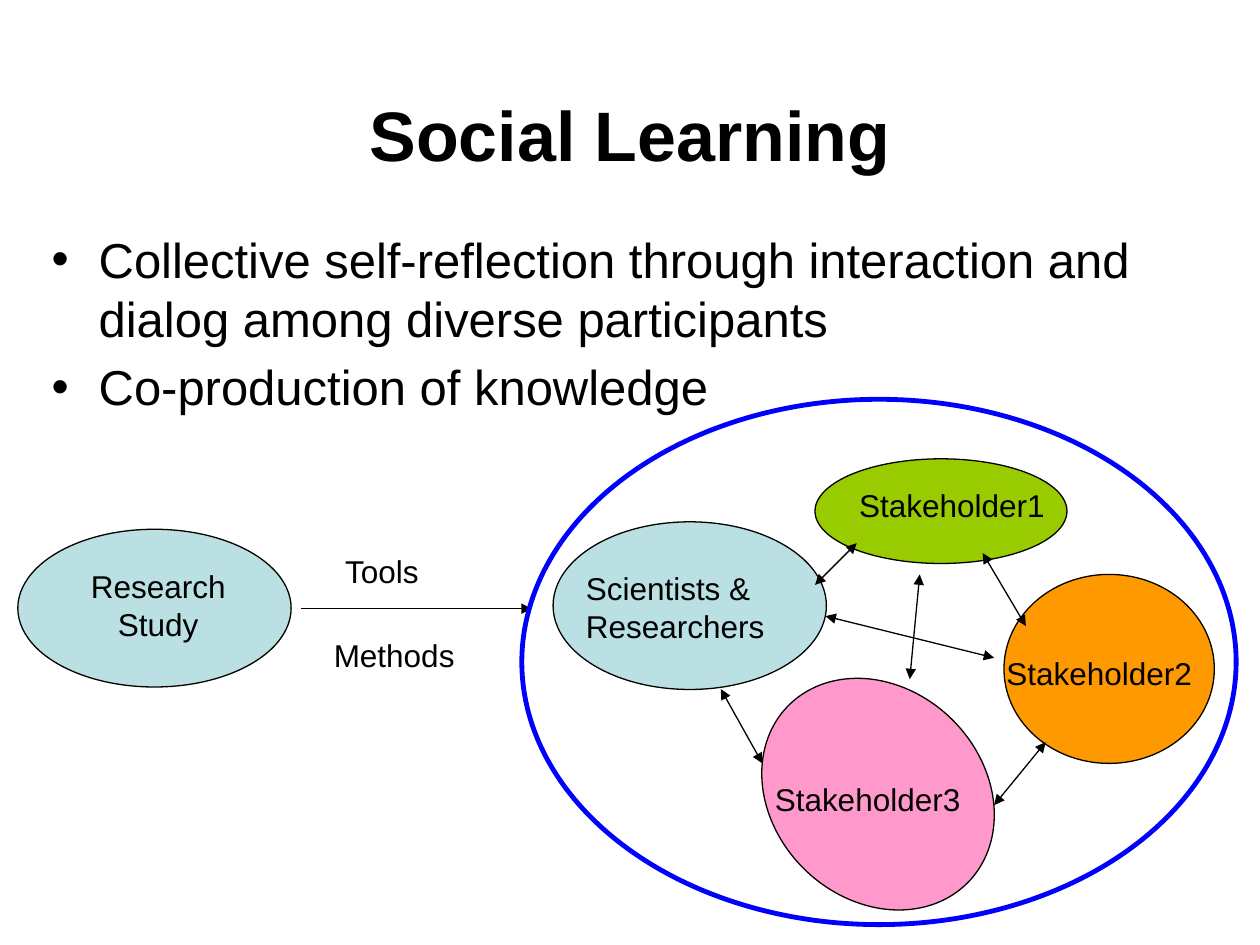
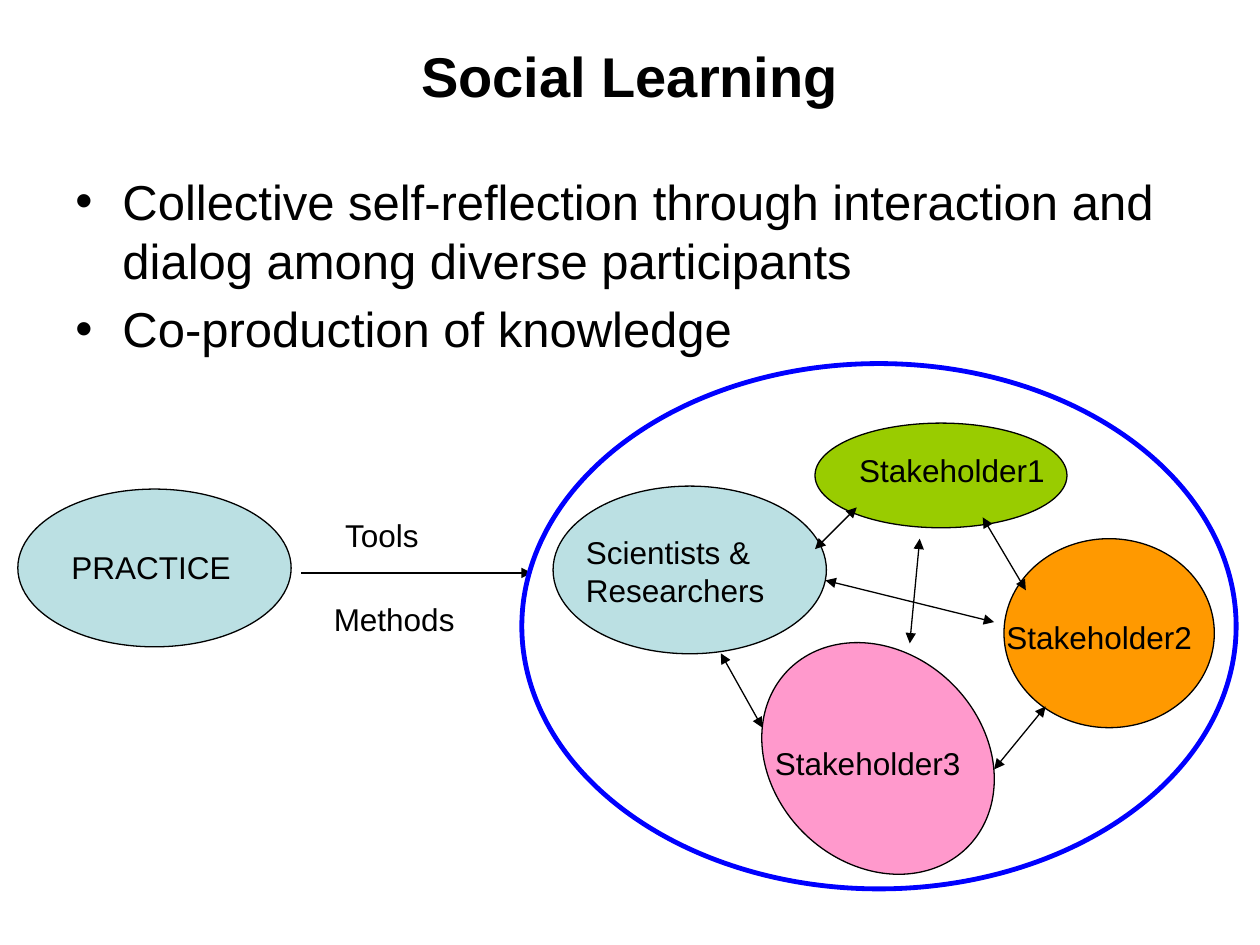
from dataclasses import dataclass

from lxml import etree
from pptx import Presentation
from pptx.dml.color import RGBColor
from pptx.enum.shapes import MSO_CONNECTOR, MSO_SHAPE
from pptx.enum.text import MSO_ANCHOR, PP_ALIGN
from pptx.oxml.ns import qn
from pptx.slide import Slide
from pptx.text.text import TextFrame
from pptx.util import Cm, Pt

LEFT, CENTER = PP_ALIGN.LEFT, PP_ALIGN.CENTER
MIDDLE = MSO_ANCHOR.MIDDLE
OVAL = MSO_SHAPE.OVAL
STRAIGHT = MSO_CONNECTOR.STRAIGHT


@dataclass(frozen=True)
class Theme:
    font: str = "Arial"
    ink: str = "000000"
    pale: str = "BBE0E3"
    ring: str = "0000FF"
    green: str = "99CC00"
    pink: str = "FF99CC"
    orange: str = "FF9900"
    body: float = 28
    label: float = 18
    gap: float = 5.6
    thin: float = 0.75
    thick: float = 2.75


THEME = Theme()


@dataclass(frozen=True)
class Box:
    """A frame in centimetres."""
    x: float
    y: float
    w: float
    h: float


@dataclass(frozen=True)
class Oval:
    box: Box
    fill: str | None = THEME.pale
    line: str = THEME.ink
    width: float = THEME.thin
    turn: float = 0


@dataclass(frozen=True)
class Label:
    text: str
    box: Box
    align: PP_ALIGN = LEFT


@dataclass(frozen=True)
class Link:
    x1: float
    y1: float
    x2: float
    y2: float
    both: bool = True


@dataclass(frozen=True)
class Page:
    title: Box
    size: float
    body: Box
    source: Oval
    name: Label
    shift: float


TITLE = "Social Learning"
POINTS = (
    "Collective self-reflection through interaction and dialog among diverse participants",
    "Co-production of knowledge",
)

# The network is placed as on the first page; each page shifts it vertically.
FLOW = Link(6.07, 12.27, 10.72, 12.27, both=False)
OVALS = (
    Oval(Box(11.15, 10.52, 5.51, 3.38)),
    Oval(Box(10.52, 8.05, 14.4, 10.59), None, THEME.ring, THEME.thick),
    Oval(Box(16.43, 9.25, 5.08, 2.11), THEME.green),
    Oval(Box(15.16, 13.89, 5.08, 4.24), THEME.pink, turn=44.4),
    Oval(Box(20.24, 11.58, 4.24, 3.81), THEME.orange),
)
LABELS = (
    Label("Scientists & Researchers", Box(11.56, 11.35, 4.45, 1.78)),
    Label("Stakeholder1", Box(17.07, 9.68, 4.88, 1.02)),
    Label("Stakeholder2", Box(20.04, 13.06, 4.88, 1.02)),
    Label("Stakeholder3", Box(15.37, 15.6, 4.88, 1.02)),
    Label("Tools", Box(6.71, 11, 4.01, 1.02)),
    Label("Methods", Box(6.48, 12.7, 3.18, 1.02)),
)
LINKS = (
    Link(14.53, 13.89, 15.37, 15.39),
    Link(18.54, 11.58, 18.34, 13.69),
    Link(17.27, 10.95, 16.43, 11.79),
    Link(19.81, 11.15, 20.68, 12.62),
    Link(21.08, 14.96, 20.04, 16.23),
    Link(16.64, 12.42, 20.04, 13.26),
)

PAGES = (
    Page(Box(1.27, 0.64, 22.86, 4.09), 40, Box(0.79, 4.5, 22.86, 13.41),
         Oval(Box(0.36, 10.67, 5.51, 3.18)),
         Label("Research Study", Box(1.07, 11.3, 4.24, 1.78), CENTER), 0),
    Page(Box(1.27, -0.08, 22.86, 3.18), 32, Box(1.27, 3.33, 22.86, 13.41),
         Oval(Box(0.36, 9.86, 5.51, 3.18)),
         Label("PRACTICE", Box(1.19, 10.92, 4.24, 1.02)), -0.72),
)


def color(code: str) -> RGBColor:
    return RGBColor.from_string(code)


def frame(box: Box, dy: float = 0) -> tuple[Cm, Cm, Cm, Cm]:
    return Cm(box.x), Cm(box.y + dy), Cm(box.w), Cm(box.h)


def write(text: TextFrame, lines: tuple[str, ...], size: float,
          align: PP_ALIGN = LEFT, bold: bool = False) -> None:
    text.word_wrap = True
    text.text = "\n".join(lines)
    for para in text.paragraphs:
        para.alignment = align
        font = para.font
        font.name, font.size, font.bold = THEME.font, Pt(size), bold
        font.color.rgb = color(THEME.ink)


def add_title(slide: Slide, page: Page) -> None:
    title = slide.shapes.title
    title.left, title.top, title.width, title.height = frame(page.title)
    title.text_frame.vertical_anchor = MIDDLE
    write(title.text_frame, (TITLE,), page.size, CENTER, True)


def add_points(slide: Slide, box: Box) -> None:
    text = slide.shapes.add_textbox(*frame(box)).text_frame
    write(text, POINTS, THEME.body)
    for para in text.paragraphs:
        para.space_before = Pt(THEME.gap)
        props = para._p.get_or_add_pPr()
        props.set("marL", str(Cm(0.95)))
        props.set("indent", str(Cm(-0.95)))
        etree.SubElement(props, qn("a:buFont"), typeface=THEME.font)
        etree.SubElement(props, qn("a:buChar"), char="•")


def add_oval(slide: Slide, oval: Oval, dy: float = 0) -> None:
    shape = slide.shapes.add_shape(OVAL, *frame(oval.box, dy))
    shape.shadow.inherit = False
    shape.rotation = oval.turn
    if oval.fill:
        shape.fill.solid()
        shape.fill.fore_color.rgb = color(oval.fill)
    else:
        shape.fill.background()
    shape.line.color.rgb = color(oval.line)
    shape.line.width = Pt(oval.width)


def add_label(slide: Slide, label: Label, dy: float = 0) -> None:
    text = slide.shapes.add_textbox(*frame(label.box, dy)).text_frame
    write(text, (label.text,), THEME.label, label.align)


def add_link(slide: Slide, link: Link, dy: float) -> None:
    line = slide.shapes.add_connector(
        STRAIGHT, Cm(link.x1), Cm(link.y1 + dy), Cm(link.x2), Cm(link.y2 + dy))
    line.line.color.rgb = color(THEME.ink)
    line.line.width = Pt(THEME.thin)
    ends = ("headEnd", "tailEnd") if link.both else ("tailEnd",)
    for end in ends:
        etree.SubElement(line.line._get_or_add_ln(), qn(f"a:{end}"), type="triangle")
    etree.SubElement(line._element.spPr, qn("a:effectLst"))


def add_network(slide: Slide, dy: float) -> None:
    add_link(slide, FLOW, dy)
    for oval in OVALS:
        add_oval(slide, oval, dy)
    for label in LABELS:
        add_label(slide, label, dy)
    for link in LINKS:
        add_link(slide, link, dy)


def main() -> None:
    deck = Presentation()
    deck.slide_width, deck.slide_height = Cm(25.4), Cm(19.05)
    for page in PAGES:
        slide = deck.slides.add_slide(deck.slide_layouts[5])
        add_title(slide, page)
        add_points(slide, page.body)
        add_oval(slide, page.source)
        add_label(slide, page.name)
        add_network(slide, page.shift)
    deck.save("out.pptx")


if __name__ == "__main__":
    main()
